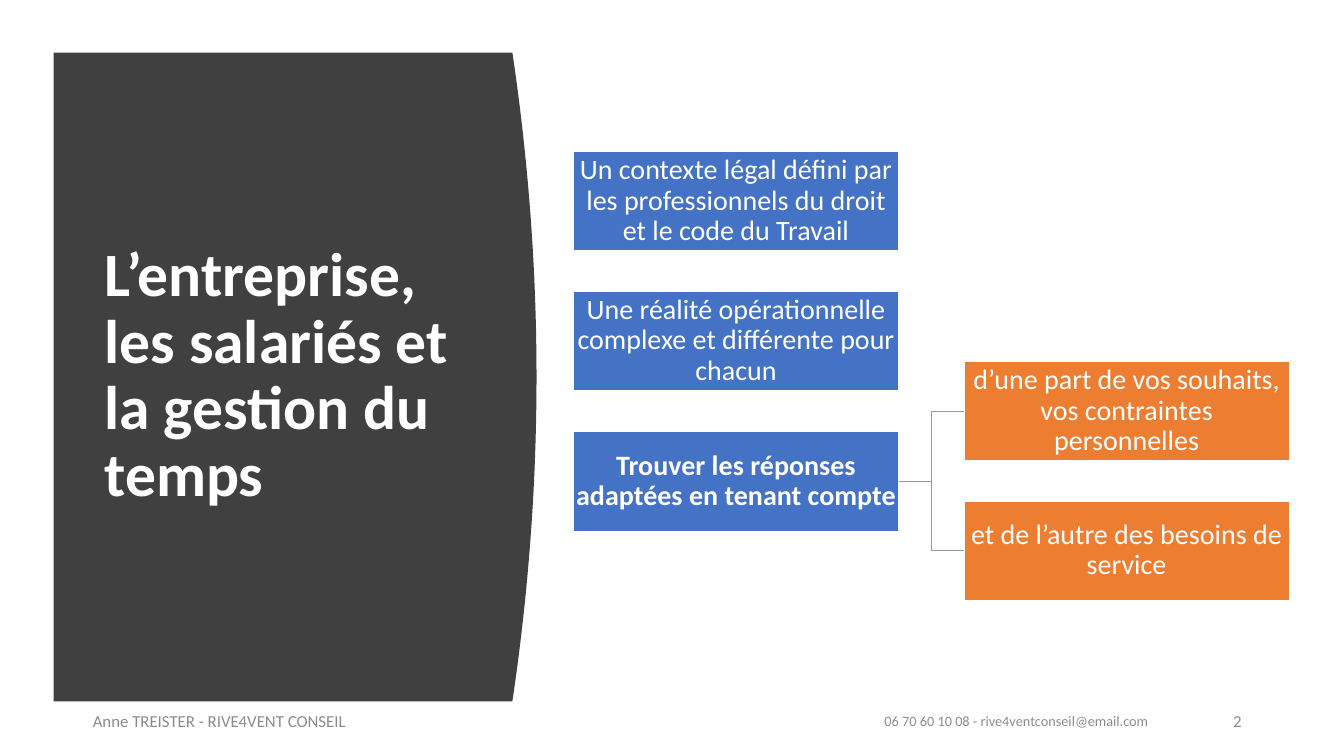
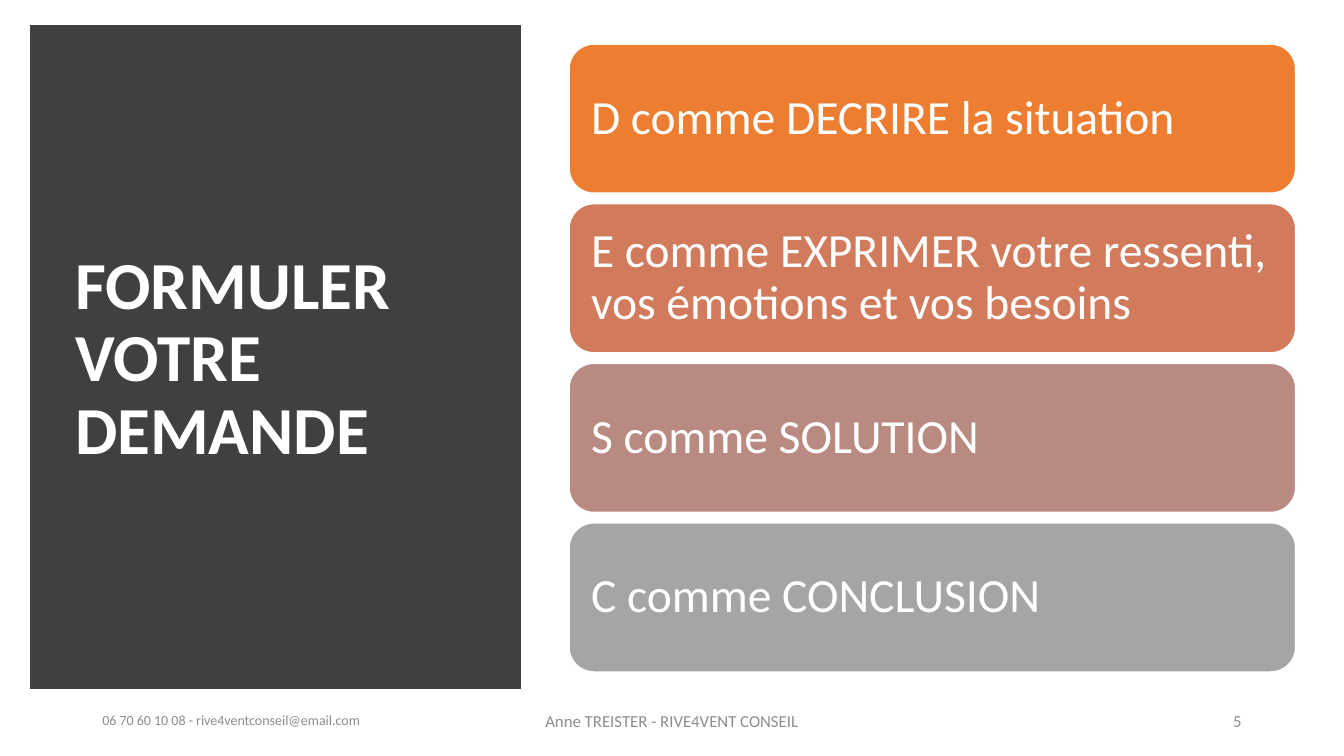
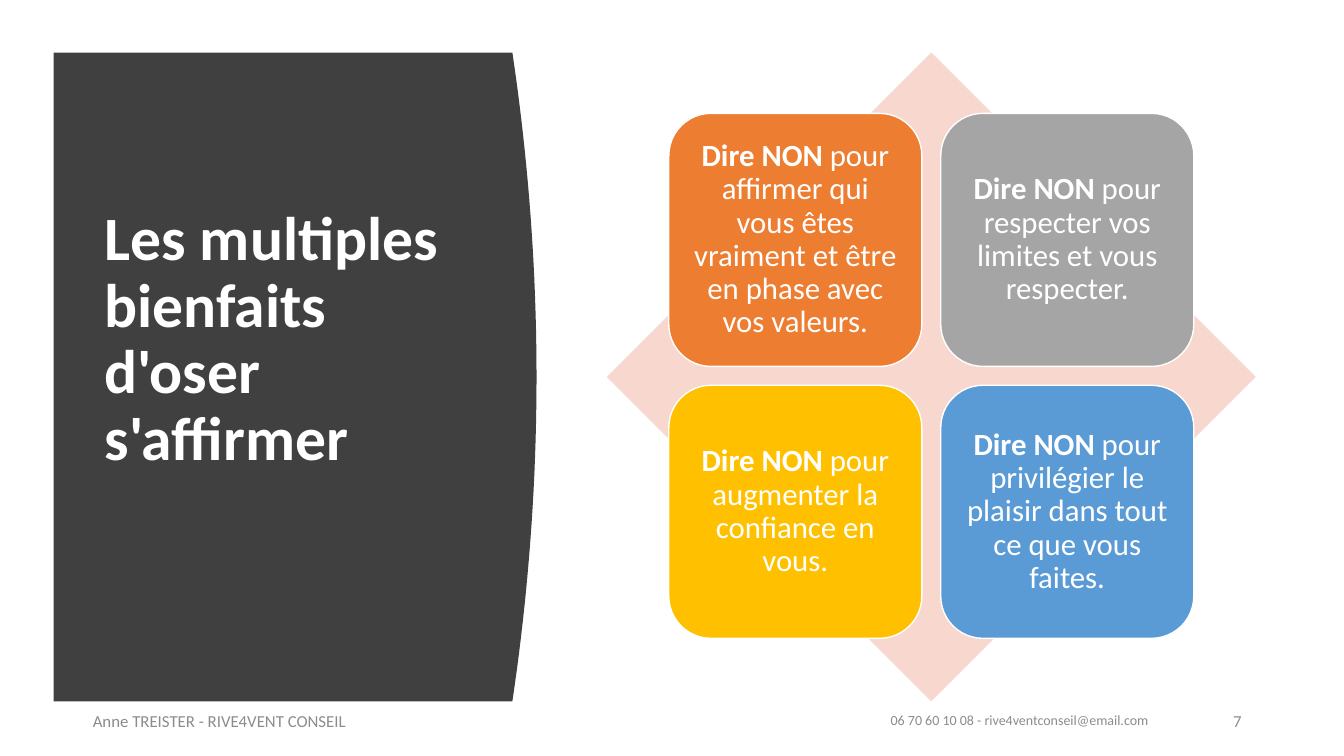
from lxml import etree
from pptx import Presentation
from pptx.dml.color import RGBColor
from pptx.enum.shapes import MSO_CONNECTOR, MSO_SHAPE
from pptx.enum.text import MSO_ANCHOR, MSO_AUTO_SIZE, PP_ALIGN
from pptx.oxml.ns import qn
from pptx.util import Emu, Pt

FONT = "Calibri"
WHITE = RGBColor(0xFF, 0xFF, 0xFF)
DARK = RGBColor(0x40, 0x40, 0x40)
BLUE = RGBColor(0x44, 0x72, 0xC4)
ORANGE = RGBColor(0xED, 0x7D, 0x31)
TERRACOTTA = RGBColor(0xD1, 0x7B, 0x5C)
ROSE = RGBColor(0xB9, 0x8A, 0x82)
GREY = RGBColor(0xA5, 0xA5, 0xA5)
GOLD = RGBColor(0xFF, 0xC0, 0x00)
SKY = RGBColor(0x5B, 0x9B, 0xD5)
PINK = RGBColor(0xF8, 0xD7, 0xCE)
LINK_GREY = RGBColor(0x99, 0x99, 0x99)
FOOTER_GREY = RGBColor(0x8C, 0x8C, 0x8C)

LEFT, CENTER, RIGHT = PP_ALIGN.LEFT, PP_ALIGN.CENTER, PP_ALIGN.RIGHT
MIDDLE = MSO_ANCHOR.MIDDLE
NO_FIT = MSO_AUTO_SIZE.NONE
RECT, ROUNDED = MSO_SHAPE.RECTANGLE, MSO_SHAPE.ROUNDED_RECTANGLE
DIAMOND = MSO_SHAPE.DIAMOND
ELBOW = MSO_CONNECTOR.ELBOW

AUTHOR = "Anne TREISTER - RIVE4VENT CONSEIL"
CONTACT = "06 70 60 10 08 - rive4ventconseil@email.com"


def px(n):
    """Pixels (96 to the inch) in EMU."""
    return Emu(round(n * 9525))


def box(*lengths):
    return [px(n) for n in lengths]


# Shared elements
def write(sp, runs, size, align=LEFT, color=WHITE, spacing=0.9, inset=None):
    """Write one paragraph made of (text, bold) runs."""
    tf = sp.text_frame
    tf.word_wrap = True
    tf.auto_size = NO_FIT
    tf.vertical_anchor = MIDDLE
    if inset is not None:
        tf.margin_left = tf.margin_right = px(inset)
        tf.margin_top = tf.margin_bottom = px(inset)
    p = tf.paragraphs[0]
    p.alignment = align
    p.line_spacing = spacing
    for text, bold in runs:
        r = p.add_run()
        r.text = text
        r.font.name = FONT
        r.font.size = Pt(size)
        r.font.bold = bold
        r.font.color.rgb = color


def add_block(slide, kind, bounds, fill, line=WHITE, width=1):
    sp = slide.shapes.add_shape(kind, *box(*bounds))
    sp.shadow.inherit = False
    sp.fill.solid()
    sp.fill.fore_color.rgb = fill
    if line is None:
        sp.line.fill.background()
    else:
        sp.line.color.rgb = line
        sp.line.width = Pt(width)
    return sp


def add_title(slide, text, bounds, size):
    """Fill the title placeholder and bring it in front of the panel."""
    title = slide.shapes.title
    title.left, title.top, title.width, title.height = box(*bounds)
    write(title, [(text, True)], size)
    title._element.getparent().append(title._element)


def add_curved_panel(slide):
    left, top, right, bottom, bulge, steps = 51, 50, 488, 668, 23, 40
    points = [(left, top)]
    for i in range(steps + 1):
        t = 2 * i / steps - 1
        y = top + (bottom - top) * i / steps
        points.append((right + bulge * (1 - t * t), y))
    points.append((left, bottom))
    points = [(px(x), px(y)) for x, y in points]
    builder = slide.shapes.build_freeform(*points[0])
    builder.add_line_segments(points[1:], close=True)
    sp = builder.convert_to_shape()
    sp.shadow.inherit = False
    sp.fill.solid()
    sp.fill.fore_color.rgb = DARK
    sp.line.fill.background()


def add_footer(slide, left, width, text, size, align):
    sp = slide.shapes.add_textbox(*box(left, 667, width, 38))
    write(sp, [(text, False)], size, align, FOOTER_GREY, spacing=1)


def add_panel_footers(slide, number, contact_size):
    add_footer(slide, 79, 432, AUTHOR, 12, LEFT)
    add_footer(slide, 815, 288, CONTACT, contact_size, RIGHT)
    add_footer(slide, 1126, 66, number, 12, RIGHT)


def add_link(slide, parent, child):
    cn = slide.shapes.add_connector(ELBOW, 0, 0, 0, 0)
    cn.begin_connect(parent, 3)
    cn.end_connect(child, 1)
    cn.line.color.rgb = LINK_GREY
    cn.line.width = Pt(0.5)
    etree.SubElement(cn._element.spPr, qn("a:effectLst"))


# Slides
def build_context(slide):
    add_curved_panel(slide)
    add_title(slide, "L’entreprise, les salariés et la gestion du temps",
              (90, 107, 359, 503), 44)
    add_panel_footers(slide, "2", 10.2)

    # Tree: left, position in half rows, fill, bold, text
    main_left, branch_left, two_rows = 546, 918, 267
    nodes = [
        (main_left, 0, BLUE, False,
         "Un contexte légal défini par les professionnels du droit et le code du Travail"),
        (main_left, 2, BLUE, False,
         "Une réalité opérationnelle complexe et différente pour chacun"),
        (main_left, 4, BLUE, True,
         "Trouver les réponses adaptées en tenant compte"),
        (branch_left, 3, ORANGE, False,
         "d’une part de vos souhaits, vos contraintes personnelles"),
        (branch_left, 5, ORANGE, False,
         "et de l’autre des besoins de service"),
    ]
    shapes = []
    for left, half_rows, fill, bold, text in nodes:
        top = 144 + half_rows * two_rows // 4
        sp = add_block(slide, RECT, (left, top, 310, 95), fill)
        write(sp, [(text, bold)], 20, CENTER, inset=1)
        shapes.append(sp)
    parent, *children = shapes[2:]
    for child in children:
        add_link(slide, parent, child)


def build_request(slide):
    panel = add_block(slide, RECT, (35, 31, 455, 619), DARK, DARK, 10)
    etree.SubElement(panel._element.spPr.find(qn("a:ln")), qn("a:miter"), lim="800000")
    add_title(slide, "FORMULER VOTRE DEMANDE", (62, 67, 399, 552), 48)
    add_footer(slide, 88, 288, CONTACT, 10, LEFT)
    add_footer(slide, 424, 432, AUTHOR, 12, CENTER)
    add_footer(slide, 904, 288, "5", 12, RIGHT)

    # Four steps
    steps = [
        (ORANGE, "D comme DECRIRE la situation"),
        (TERRACOTTA, "E comme EXPRIMER votre ressenti, vos émotions et vos besoins"),
        (ROSE, "S comme SOLUTION"),
        (GREY, "C comme CONCLUSION"),
    ]
    for i, (fill, text) in enumerate(steps):
        sp = add_block(slide, ROUNDED, (542, 42 + i * 152, 692, 142), fill)
        write(sp, [(text, False)], 34, inset=14)


def build_benefits(slide):
    add_curved_panel(slide)
    add_title(slide, "Les multiples bienfaits d'oser s'affirmer",
              (90, 107, 359, 435), 44)
    add_panel_footers(slide, "7", 10)

    # Two by two tiles on a diamond
    add_block(slide, DIAMOND, (578, 50, 618, 618), PINK, None)
    tiles = [
        (ORANGE, " pour affirmer qui vous êtes vraiment et être en phase avec vos valeurs."),
        (GREY, " pour respecter vos limites et vous respecter."),
        (GOLD, " pour augmenter la confiance en vous."),
        (SKY, " pour privilégier le plaisir dans tout ce que vous faites."),
    ]
    for i, (fill, text) in enumerate(tiles):
        row, col = divmod(i, 2)
        bounds = (637 + col * 259, 108 + row * 259, 241, 241)
        sp = add_block(slide, ROUNDED, bounds, fill)
        write(sp, [("Dire NON", True), (text, False)], 22, CENTER, inset=9)


def main():
    prs = Presentation()
    prs.slide_width, prs.slide_height = box(1280, 720)
    title_only = prs.slide_layouts[5]
    for build in (build_context, build_request, build_benefits):
        build(prs.slides.add_slide(title_only))
    prs.save("out.pptx")


if __name__ == "__main__":
    main()
